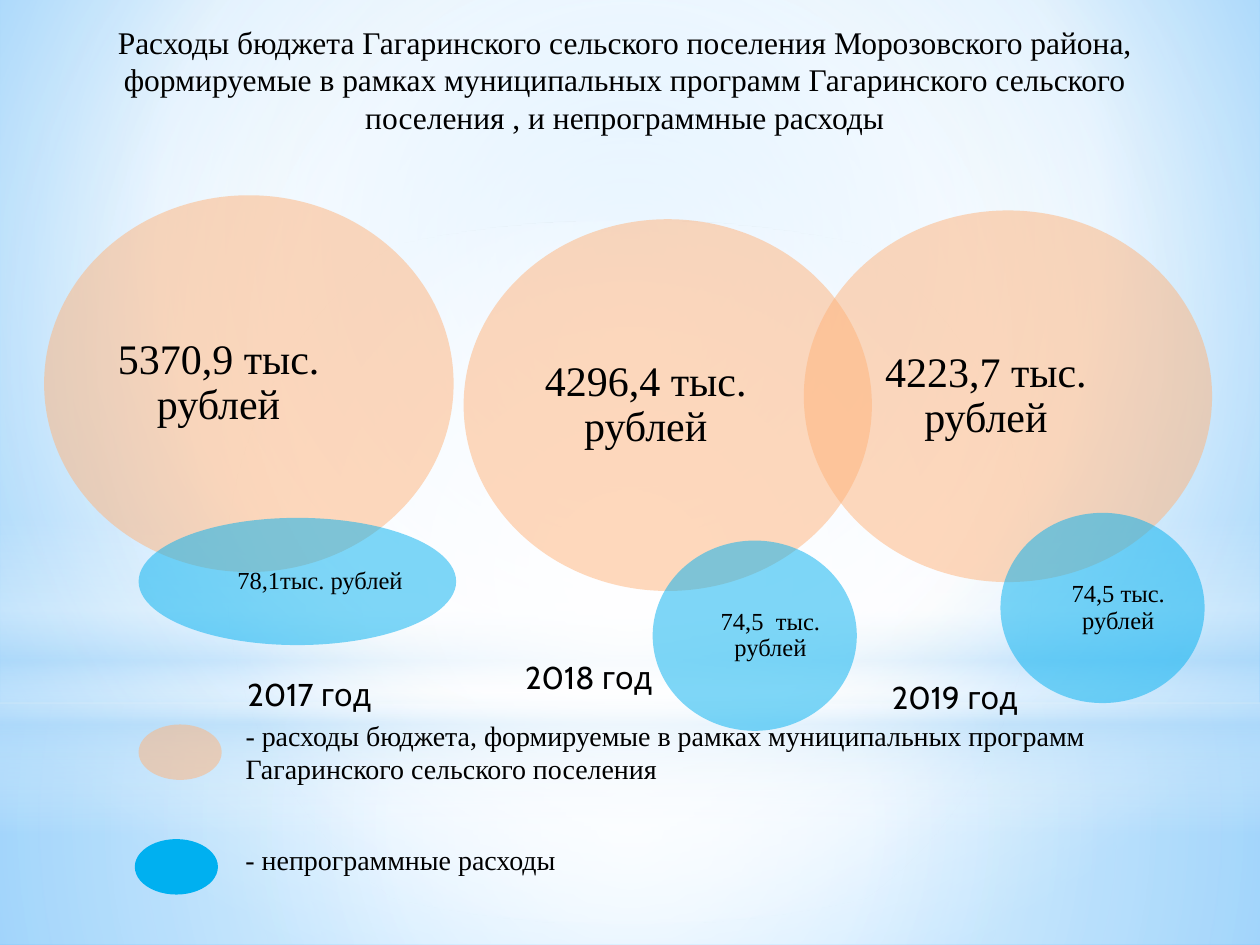
from pptx import Presentation
from pptx.dml.color import RGBColor
from pptx.enum.shapes import MSO_SHAPE as Preset
from pptx.enum.text import MSO_ANCHOR as Anchor, MSO_AUTO_SIZE as AutoSize, PP_ALIGN as Align
from pptx.oxml import parse_xml
from pptx.oxml.ns import nsdecls, qn
from pptx.util import Inches, Pt

BLACK = RGBColor(0x00, 0x00, 0x00)
WHITE = RGBColor(0xFF, 0xFF, 0xFF)
PEACH = RGBColor(0xFF, 0xB3, 0x7A)
BLUE = RGBColor(0x00, 0xB0, 0xF0)
PALE_BLUE = RGBColor(0xB4, 0xDC, 0xFA)
SKY = RGBColor(0x9E, 0xD5, 0xFF)
DEEP_SKY = RGBColor(0x5B, 0xB9, 0xFF)

SERIF = "Times New Roman"
SANS = "Cabin"
COLUMNS, ROWS = 100, 75
CENTRE = (50, 50, 50, 50)


class BudgetSlide:
    def __init__(self, presentation):
        self.column = presentation.slide_width / COLUMNS
        self.row = presentation.slide_height / ROWS
        self.slide = presentation.slides.add_slide(presentation.slide_layouts[5])

    def box(self, left, top, width, height):
        return (round(left * self.column), round(top * self.row),
                round(width * self.column), round(height * self.row))

    def gradient(self, stops, focus=None):
        stop_xml = "".join(
            f'<a:gs pos="{position * 1000}"><a:srgbClr val="{color}">'
            f'<a:alpha val="{opacity * 1000}"/></a:srgbClr></a:gs>'
            for position, color, opacity in stops)
        if focus:
            sides = " ".join(f'{side}="{share * 1000}"' for side, share in zip("ltrb", focus))
            direction = f'<a:path path="circle"><a:fillToRect {sides}/></a:path>'
        else:
            direction = '<a:lin ang="5400000" scaled="0"/>'
        return parse_xml(f'<a:gradFill {nsdecls("a")} rotWithShape="1">'
                         f'<a:gsLst>{stop_xml}</a:gsLst>{direction}</a:gradFill>')

    def background(self, stops, focus):
        self.slide.background.fill.solid()
        properties = self.slide.element.find(".//" + qn("p:bgPr"))
        properties.replace(properties.find(qn("a:solidFill")), self.gradient(stops, focus))

    def shape(self, preset, place, color, opacity=100):
        shape = self.slide.shapes.add_shape(preset, *self.box(*place))
        shape.shadow.inherit = False
        shape.line.fill.background()
        shape.fill.solid()
        shape.fill.fore_color.rgb = color
        if opacity < 100:
            shape.element.spPr.find(".//" + qn("a:srgbClr")).append(
                parse_xml(f'<a:alpha {nsdecls("a")} val="{opacity * 1000}"/>'))
        return shape

    def glow(self, preset, place, stops, focus=None):
        properties = self.shape(preset, place, WHITE).element.spPr
        properties.replace(properties.find(qn("a:solidFill")), self.gradient(stops, focus))

    def add_text(self, frame, text, size, font=SERIF, align=Align.LEFT, spacing=1.0):
        frame.word_wrap = True
        paragraph = frame.paragraphs[0]
        paragraph.alignment = align
        paragraph.line_spacing = spacing
        run = paragraph.add_run()
        run.text = text
        run.font.size = Pt(size)
        run.font.name = font
        run.font.color.rgb = BLACK

    def title(self, place, text):
        title = self.slide.shapes.title
        title.left, title.top, title.width, title.height = self.box(*place)
        title.element.getparent().append(title.element)
        title.text_frame.auto_size = AutoSize.NONE
        title.text_frame.vertical_anchor = Anchor.TOP
        self.add_text(title.text_frame, text, 18, align=Align.CENTER)

    def bubble(self, place, color, text, size, left_inset=0, right_inset=0):
        frame = self.shape(Preset.OVAL, place, color, 50).text_frame
        frame.margin_left = round(left_inset * self.column)
        frame.margin_right = round(right_inset * self.column)
        frame.margin_top = frame.margin_bottom = 0
        frame.vertical_anchor = Anchor.MIDDLE
        self.add_text(frame, text, size, align=Align.CENTER, spacing=0.9)

    def label(self, place, text, size, font=SERIF, align=Align.LEFT):
        frame = self.slide.shapes.add_textbox(*self.box(*place)).text_frame
        self.add_text(frame, text, size, font, align)


def main():
    presentation = Presentation()
    presentation.slide_width, presentation.slide_height = Inches(10), Inches(7.5)
    page = BudgetSlide(presentation)

    page.background([(0, SKY, 100), (60, WHITE, 100), (100, DEEP_SKY, 100)], (20, 10, 20, 60))
    page.glow(Preset.RECTANGLE, (0, 55.8, 100, 19.2),
              [(0, WHITE, 91), (37, WHITE, 76), (100, PALE_BLUE, 79)], CENTRE)
    page.glow(Preset.RECTANGLE, (0, 0, 100, 55.8),
              [(0, WHITE, 89), (48, WHITE, 62), (100, PALE_BLUE, 79)], CENTRE)
    page.glow(Preset.RECTANGLE, (0, 41.2, 100, 25),
              [(0, WHITE, 0), (29, WHITE, 30), (45, PALE_BLUE, 40),
               (55, WHITE, 26), (65, PALE_BLUE, 60), (100, WHITE, 0)])
    page.glow(Preset.OVAL, (0, 17.5, 100, 55.8), [(0, WHITE, 100), (56, WHITE, 0)], CENTRE)

    page.title((4.3, 1.3, 90.6, 10.1),
               "Расходы бюджета Гагаринского сельского поселения Морозовского района, "
               "формируемые в рамках муниципальных программ Гагаринского сельского "
               "поселения , и непрограммные расходы")

    large, small = (32.4, 29.5), (16.2, 15.1)
    years = [
        ((36.8, 17.4, *large), "4296,4 тыс. рублей", 3.5,
         (51.8, 42.9, *small), "74,5  тыс. рублей", 2.5),
        ((3.5, 15.5, 32.5, 29.9), "5370,9 тыс. рублей", 4.8,
         (11, 41.1, 25.2, 10.1), "78,1тыс. рублей", 3.6),
        ((63.8, 16.7, *large), "4223,7 тыс. рублей", 3.5,
         (79.4, 40.7, *small), "74,5 тыс. рублей", 2.5),
    ]
    for program_place, program, right_inset, other_place, other, left_inset in years:
        page.bubble(program_place, PEACH, program, 24, right_inset=right_inset)
        page.bubble(other_place, BLUE, other, 14, left_inset=left_inset)

    page.label((11.7, 53.1, 25.7, 4), "2017 год", 18, SANS, Align.CENTER)
    page.label((40.7, 51.7, 32.7, 4), "2018 год", 18, SANS)
    page.label((69.8, 53.3, 32.7, 4), "2019 год", 18, SANS)

    page.shape(Preset.OVAL, (11, 57.5, 6.6, 4.4), PEACH, 50)
    page.label((18.5, 56.5, 77.2, 6.4),
               "- расходы бюджета, формируемые в рамках муниципальных программ "
               "Гагаринского сельского поселения", 16)
    page.shape(Preset.OVAL, (10.7, 66.6, 6.6, 4.4), BLUE)
    page.label((18.5, 66.4, 67.7, 3.7), "- непрограммные расходы", 16)

    presentation.save("out.pptx")


if __name__ == "__main__":
    main()
